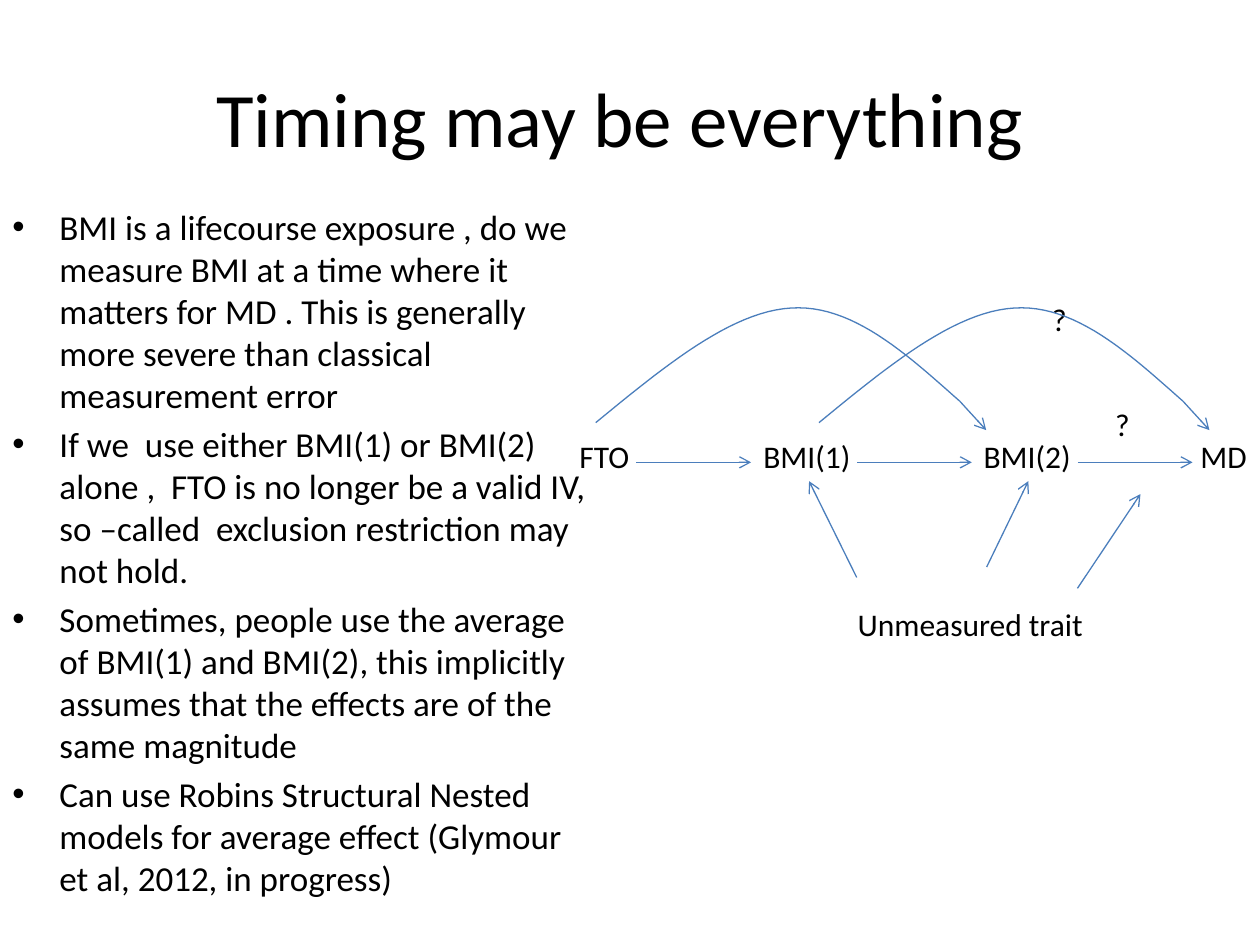
import pptx
import pptx.dml.color
import pptx.enum.dml
import pptx.enum.text
import pptx.oxml
import pptx.oxml.ns
import pptx.util
from pptx.util import Cm

BLACK, BLUE = "000000", "4B7EBC"
ANCHOR = pptx.enum.text.MSO_ANCHOR
ALIGN = pptx.enum.text.PP_ALIGN

BULLETS = [
    "BMI is a lifecourse exposure , do we measure BMI at a time where it matters for MD . "
    "This is generally more severe than classical measurement error",
    "If we  use either BMI(1) or BMI(2) alone ,  FTO is no longer be a valid IV, "
    "so –called  exclusion restriction may not hold.",
    "Sometimes, people use the average of BMI(1) and BMI(2), this implicitly assumes "
    "that the effects are of the same magnitude",
    "Can use Robins Structural Nested models for average effect (Glymour et al, 2012, in progress)",
]


def color(hex_string):
    return pptx.dml.color.RGBColor.from_string(hex_string)


def add_xml(parent, tag, **attributes):
    element = pptx.oxml.parse_xml(f"<a:{tag} {pptx.oxml.ns.nsdecls('a')}/>")
    for name, value in attributes.items():
        element.set(name, value)
    parent.append(element)


def set_attributes(target, values):
    for name, value in values.items():
        setattr(target, name, value)


def style_font(paragraph, size):
    set_attributes(paragraph.font, {"name": "Calibri", "size": pptx.util.Pt(size)})
    paragraph.font.color.rgb = color(BLACK)


def add_text(slide, box, text, size, wrap=False, align=ALIGN.LEFT, anchor=ANCHOR.TOP):
    frame = slide.shapes.add_textbox(*map(Cm, box)).text_frame
    set_attributes(frame, {"word_wrap": wrap, "vertical_anchor": anchor})
    paragraph = frame.paragraphs[0]
    set_attributes(paragraph, {"text": text, "alignment": align})
    style_font(paragraph, size)


def style_line(line):
    line.color.rgb = color(BLUE)
    line.width = pptx.util.Pt(0.75)


def add_arrow(slide, start, end):
    connector = slide.shapes.add_connector(
        pptx.enum.shapes.MSO_CONNECTOR.STRAIGHT, *map(Cm, (*start, *end)))
    style_line(connector.line)
    add_xml(connector.line._get_or_add_ln(), "tailEnd", type="arrow")
    add_xml(connector._element.spPr, "effectLst")


def bezier(points, steps=24):
    """Sample a cubic curve given by four points."""
    for step in range(1, steps + 1):
        t = step / steps
        weights = ((1 - t) ** 3, 3 * t * (1 - t) ** 2, 3 * t * t * (1 - t), t ** 3)
        yield tuple(sum(w * p[axis] for w, p in zip(weights, points)) for axis in (0, 1))


def add_arc(slide, left, top):
    """Arched path that ends in a short straight arrow."""
    offsets = [(0, 0), (1.37, -1.12), (2.72, -2.24), (3.94, -2.31),
               (5.16, -2.39), (6.25, -1.4), (7.34, -0.43), (7.87, 0.15)]
    points = [(left + x, top + y) for x, y in offsets]
    curve = [*bezier(points[:4]), *bezier(points[3:7])]
    builder = slide.shapes.build_freeform(Cm(points[0][0]), Cm(points[0][1]))
    builder.add_line_segments([(Cm(x), Cm(y)) for x, y in curve], close=False)
    shape = builder.convert_to_shape()
    shape.shadow.inherit = False
    shape.fill.background()
    style_line(shape.line)
    add_arrow(slide, points[6], points[7])


def add_title(slide, box):
    add_text(slide, box, "Timing may be everything", 44, True, ALIGN.CENTER, ANCHOR.MIDDLE)


def add_bullets(slide, box):
    frame = slide.shapes.add_textbox(*map(Cm, box)).text_frame
    frame.word_wrap = True
    for index, text in enumerate(BULLETS):
        paragraph = frame.add_paragraph() if index else frame.paragraphs[0]
        paragraph.text = text
        paragraph.space_before = pptx.util.Pt(4 if index else 0)
        properties = paragraph._p.get_or_add_pPr()
        properties.set("marL", str(Cm(0.95)))
        properties.set("indent", str(-Cm(0.95)))
        add_xml(properties, "buFont", typeface="Arial")
        add_xml(properties, "buChar", char="•")
        style_font(paragraph, 20)


def add_diagram(slide, left, top):
    def at(x, y):
        return left + x, top + y

    # Variables and other labels: text, x, y, width
    labels = [("FTO", 0, 2.77, 1.52), ("BMI(1)", 3.71, 2.77, 2.34),
              ("BMI(2)", 8.15, 2.77, 2.29), ("MD", 12.52, 2.77, 1.45),
              ("Unmeasured trait", 5.61, 6.15, 5.11),
              ("?", 10.8, 2.13, 0.81), ("?", 9.53, 0, 0.81)]
    for text, x, y, width in labels:
        add_text(slide, (*at(x, y), width, 1.02), text, 18)

    # Causal chain
    for step in range(3):
        x = 1.4 + 4.45 * step
        add_arrow(slide, at(x, 3.4), at(x + 2.31, 3.4))

    # Effects of the unmeasured trait
    for start, end in [((5.84, 5.72), (4.88, 3.78)),
                       ((8.46, 5.51), (9.3, 3.78)),
                       ((10.29, 5.94), (11.56, 4.04))]:
        add_arrow(slide, at(*start), at(*end))

    # Effects that skip a step
    for x in (0.58, 5.08):
        add_arc(slide, *at(x, 2.6))


def main():
    presentation = pptx.Presentation()
    set_attributes(presentation, {"slide_width": Cm(25.4), "slide_height": Cm(19.05)})
    slide = presentation.slides.add_slide(presentation.slide_layouts[6])
    add_title(slide, (1.07, 0.76, 22.86, 3.18))
    add_bullets(slide, (0, 4.02, 12.27, 15.03))
    add_diagram(slide, 11.43, 5.92)
    presentation.save("out.pptx")


if __name__ == "__main__":
    main()
